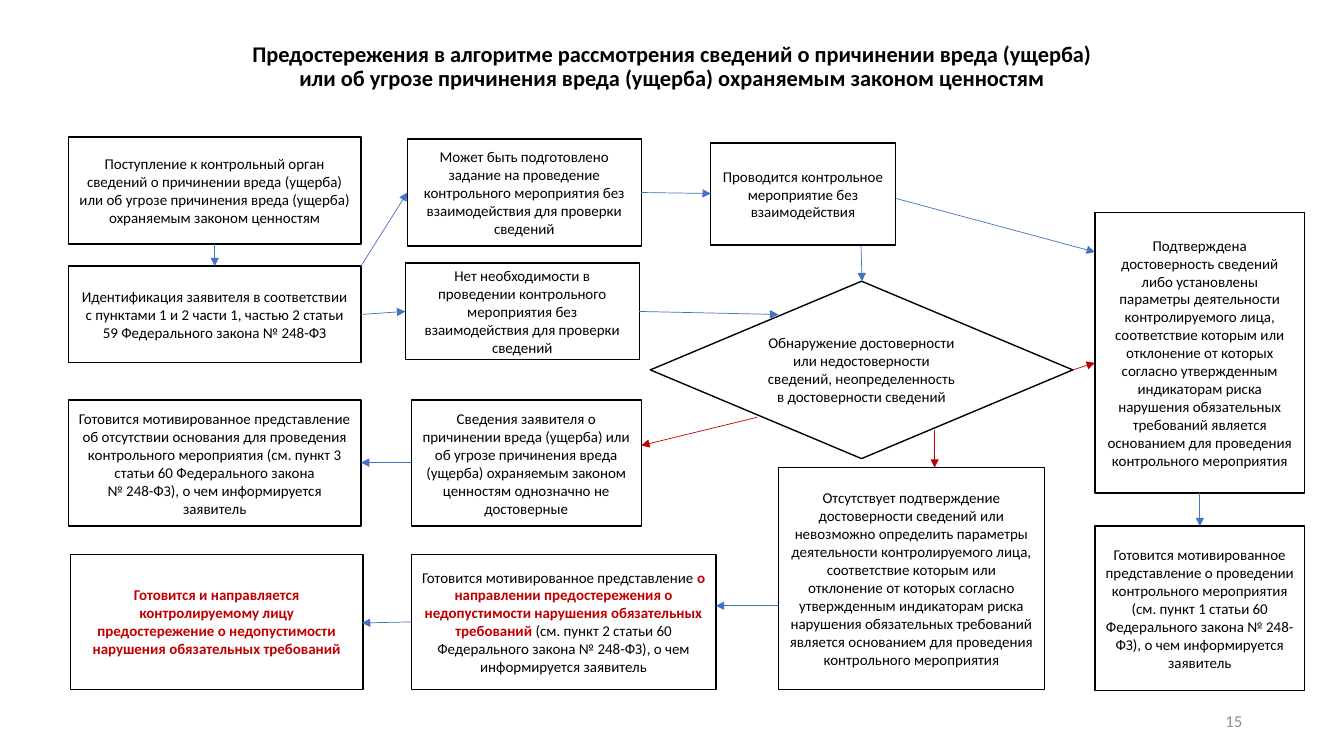
from lxml import etree
from pptx import Presentation
from pptx.dml.color import RGBColor
from pptx.enum.shapes import MSO_CONNECTOR as Connector, MSO_SHAPE as Shape
from pptx.enum.text import MSO_ANCHOR as Anchor, PP_ALIGN as Align
from pptx.oxml.ns import qn
from pptx.util import Inches, Pt

FONT = "Calibri"
BODY_SIZE = 10.7
COLOURS = {
    "text": "000000",
    "box": "FFFFFF",
    "warning": "C00000",
    "flow": "4472C4",
    "number": "8C8C8C",
}

TITLE = [
    "Предостережения в алгоритме рассмотрения сведений о причинении вреда (ущерба)",
    "или об угрозе причинения вреда (ущерба) охраняемым законом ценностям",
]

# Left, top, width, height; then paragraphs, where **...** marks a warning
STEPS = [
    ((0.68, 1.36, 2.9, 1.06), [
        "Поступление к контрольный орган сведений о причинении вреда (ущерба) "
        "или об угрозе причинения вреда (ущерба) охраняемым законом ценностям"]),
    ((0.68, 2.64, 2.9, 0.96), [
        "Идентификация заявителя в соответствии с пунктами 1 и 2 части 1, "
        "частью 2 статьи 59 Федерального закона № 248-ФЗ"]),
    ((4.04, 1.38, 2.32, 1.06), [
        "Может быть подготовлено задание на проведение контрольного мероприятия "
        "без взаимодействия для проверки сведений"]),
    ((4.02, 2.61, 2.32, 0.96), [
        "Нет необходимости в проведении контрольного мероприятия "
        "без взаимодействия для проверки сведений"]),
    ((7.05, 1.42, 1.83, 1.01), [
        "Проводится контрольное мероприятие без взаимодействия"]),
    ((10.86, 2.11, 2.08, 2.78), [
        "Подтверждена достоверность сведений либо установлены параметры "
        "деятельности контролируемого лица, соответствие которым или отклонение "
        "от которых согласно утвержденным индикаторам риска нарушения обязательных "
        "требований является основанием для проведения контрольного мероприятия"]),
    ((10.86, 5.22, 2.08, 1.63), [
        "Готовится мотивированное представление о проведении контрольного "
        "мероприятия (см. пункт 1 статьи 60 Федерального закона № 248-ФЗ), "
        "о чем информируется заявитель"]),
    ((4.08, 3.97, 2.28, 1.25), [
        "Сведения заявителя о причинении вреда (ущерба) или об угрозе причинения "
        "вреда (ущерба) охраняемым законом ценностям однозначно не достоверные"]),
    ((0.68, 3.97, 2.9, 1.25), [
        "Готовится мотивированное представление об отсутствии основания для "
        "проведения контрольного мероприятия (см. пункт 3 статьи 60 "
        "Федерального закона",
        "№ 248-ФЗ), о чем информируется заявитель"]),
    ((7.72, 4.64, 2.64, 2.2), [
        "Отсутствует подтверждение достоверности сведений или невозможно "
        "определить параметры деятельности контролируемого лица, соответствие "
        "которым или отклонение от которых согласно утвержденным индикаторам риска "
        "нарушения обязательных требований является основанием для проведения "
        "контрольного мероприятия"]),
    ((4.08, 5.5, 3.02, 1.34), [
        "Готовится мотивированное представление **о направлении предостережения "
        "о недопустимости нарушения обязательных требований **(см. пункт 2 статьи 60 "
        "Федерального закона № 248-ФЗ), о чем информируется заявитель"]),
    ((0.7, 5.5, 2.9, 1.34), [
        "**Готовится и направляется контролируемому лицу предостережение "
        "о недопустимости нарушения обязательных требований**"]),
]

DECISION = ((6.45, 2.79, 4.19, 1.76), [
    "Обнаружение достоверности или недостоверности сведений, "
    "неопределенность в достоверности сведений"])

# Start x, start y, end x, end y
FLOW_ARROWS = [
    (2.13, 2.42, 2.13, 2.64),
    (3.58, 2.64, 4.04, 1.91),
    (3.58, 3.12, 4.02, 3.09),
    (6.36, 1.91, 7.05, 1.92),
    (6.34, 3.09, 7.72, 3.12),
    (8.54, 2.44, 8.55, 2.79),
    (8.89, 1.97, 10.86, 2.5),
    (11.9, 4.89, 11.9, 5.22),
    (4.08, 4.59, 3.58, 4.59),
    (7.72, 6.01, 7.1, 6.01),
    (4.08, 6.17, 3.59, 6.18),
]
OUTCOME_ARROWS = [
    (10.64, 3.67, 10.86, 3.6),
    (9.27, 4.27, 9.27, 4.64),
    (7.51, 4.14, 6.36, 4.42),
]


def colour(name):
    return RGBColor.from_string(COLOURS[name])


def format_run(run, size, colour_name, bold=False):
    run.font.name = FONT
    run.font.size = Pt(size)
    run.font.bold = bold
    run.font.color.rgb = colour(colour_name)


def add_label(page, place, lines, size, colour_name, align, anchor, bold=False):
    """Add a plain text box with one paragraph per line."""
    label = page.shapes.add_textbox(*map(Inches, place))
    frame = label.text_frame
    frame.word_wrap = True
    frame.vertical_anchor = anchor
    frame.text = "\n".join(lines)
    for para in frame.paragraphs:
        para.alignment = align
        format_run(para.runs[0], size, colour_name, bold)
    return frame


def add_title(page):
    frame = add_label(page, (0.43, 0.43, 12.47, 0.48), TITLE, 16, "text",
                      Align.CENTER, Anchor.BOTTOM, bold=True)
    frame.margin_left = frame.margin_right = 0
    frame.margin_top = frame.margin_bottom = 0
    for para in frame.paragraphs:
        para.line_spacing = 0.9


def add_step(page, place, lines, kind=Shape.RECTANGLE):
    """Add an outlined box of the flowchart with centred text."""
    box = page.shapes.add_shape(kind, *map(Inches, place))
    box.shadow.inherit = False
    box.fill.solid()
    box.fill.fore_color.rgb = colour("box")
    box.line.color.rgb = colour("text")
    box.line.width = Pt(1)
    frame = box.text_frame
    frame.word_wrap = True
    frame.vertical_anchor = Anchor.MIDDLE
    for index, line in enumerate(lines):
        para = frame.add_paragraph() if index else frame.paragraphs[0]
        para.alignment = Align.CENTER
        for position, part in enumerate(line.split("**")):
            if part:
                warning = position % 2 == 1
                run = para.add_run()
                run.text = part
                format_run(run, BODY_SIZE, "warning" if warning else "text", warning)


def add_arrow(page, ends, colour_name):
    arrow = page.shapes.add_connector(Connector.STRAIGHT, *map(Inches, ends))
    arrow.line.color.rgb = colour(colour_name)
    arrow.line.width = Pt(0.5)
    etree.SubElement(arrow.line._get_or_add_ln(), qn("a:tailEnd"), type="triangle")
    etree.SubElement(arrow._element.spPr, qn("a:effectLst"))


def main():
    deck = Presentation()
    deck.slide_width, deck.slide_height = Inches(13.33), Inches(7.5)
    page = deck.slides.add_slide(deck.slide_layouts[6])

    # Title and page number
    add_title(page)
    add_label(page, (9.42, 6.95, 3, 0.4), ["15"], 12, "number",
              Align.RIGHT, Anchor.MIDDLE)

    # Flowchart boxes
    add_step(page, *DECISION, kind=Shape.DIAMOND)
    for place, lines in STEPS:
        add_step(page, place, lines)

    # Arrows
    for ends in FLOW_ARROWS:
        add_arrow(page, ends, "flow")
    for ends in OUTCOME_ARROWS:
        add_arrow(page, ends, "warning")

    deck.save("out.pptx")


if __name__ == "__main__":
    main()
